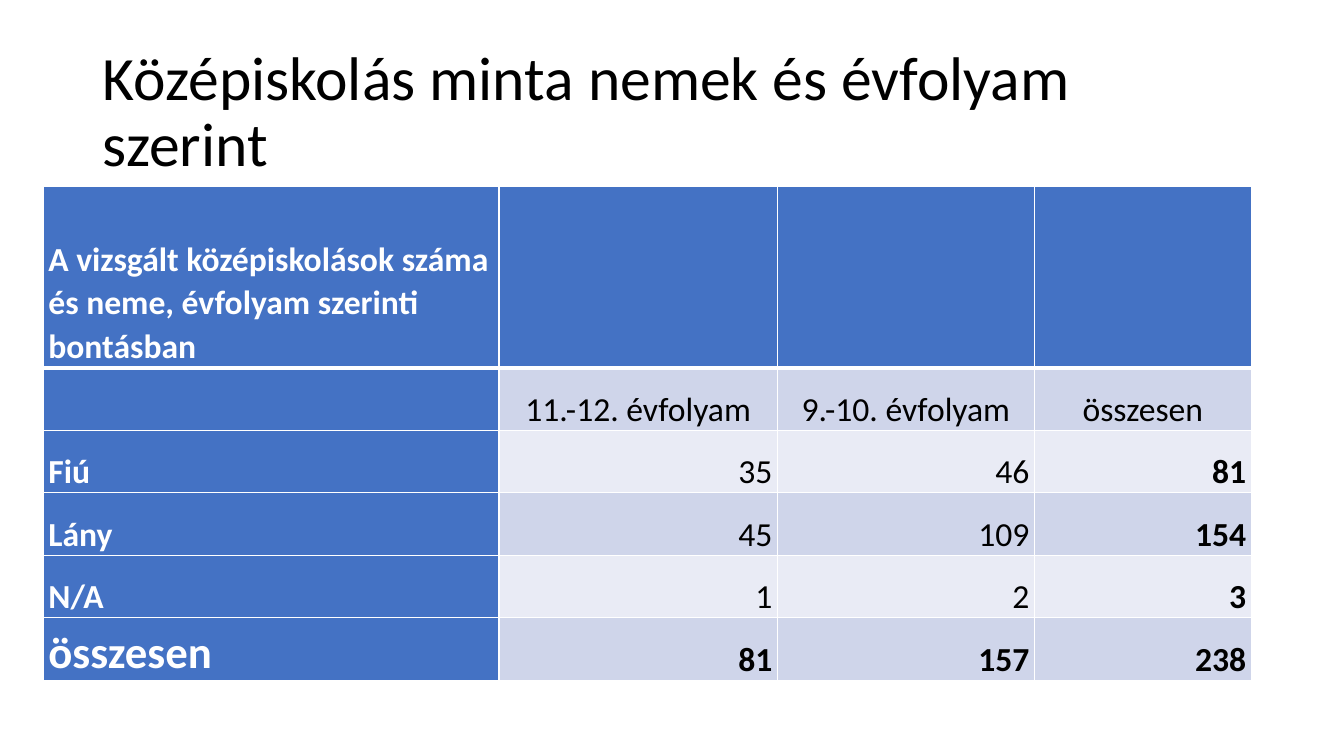
from lxml.etree import SubElement
from pptx import Presentation
from pptx.dml.color import RGBColor
from pptx.enum.text import MSO_ANCHOR, MSO_AUTO_SIZE, PP_ALIGN
from pptx.oxml.ns import qn
from pptx.util import Inches, Pt

TITLE = "Középiskolás minta nemek és évfolyam szerint"
ROWS = [
    ["A vizsgált középiskolások száma és neme, évfolyam szerinti bontásban", "", "", ""],
    ["", "11.-12. évfolyam", "9.-10. évfolyam", "összesen"],
    ["Fiú", "35", "46", "81"],
    ["Lány", "45", "109", "154"],
    ["N/A", "1", "2", "3"],
    ["összesen", "81", "157", "238"],
]
COLUMN_WIDTHS = [4.52, 2.76, 2.55, 2.15]
ROW_HEIGHTS = [1.8] + [0.62] * 5

FONT = "Calibri"
BLACK = RGBColor(0x00, 0x00, 0x00)
WHITE = RGBColor(0xFF, 0xFF, 0xFF)
BLUE = RGBColor(0x44, 0x72, 0xC4)
BANDS = [RGBColor(0xE9, 0xEB, 0xF5), RGBColor(0xCF, 0xD5, 0xEA)]
CELL_FORMAT = {
    "vertical_anchor": MSO_ANCHOR.BOTTOM,
    "margin_left": Inches(0.05),
    "margin_right": Inches(0.05),
    "margin_top": 0,
    "margin_bottom": 0,
}


def set_attributes(target, values):
    """Set every named value on the target."""
    for name, value in values.items():
        setattr(target, name, value)


def format_font(font, size, color, bold=False):
    """Apply the slide font with the given size, colour and weight."""
    set_attributes(font, {"name": FONT, "size": Pt(size), "bold": bold})
    font.color.rgb = color


def add_borders(cell, widths):
    """Draw white borders whose widths in points are keyed by side."""
    properties = cell._tc.get_or_add_tcPr()
    for side, width in widths.items():
        line = SubElement(properties, qn(f"a:ln{side}"), w=str(Pt(width)))
        fill = SubElement(line, qn("a:solidFill"))
        SubElement(fill, qn("a:srgbClr"), val=str(WHITE))


def add_title(slide):
    """Place and format the title."""
    title = slide.shapes.title
    set_attributes(title, {"left": Inches(0.92), "top": Inches(0.4),
                           "width": Inches(11.5), "height": Inches(1.45)})
    frame = title.text_frame
    frame.text = TITLE
    set_attributes(frame, {"word_wrap": True, "auto_size": MSO_AUTO_SIZE.NONE,
                           "vertical_anchor": MSO_ANCHOR.MIDDLE})
    paragraph = frame.paragraphs[0]
    set_attributes(paragraph, {"alignment": PP_ALIGN.LEFT, "line_spacing": 0.9})
    format_font(paragraph.runs[0].font, 44, BLACK)


def format_cell(cell, text, row, column):
    """Fill one cell according to its place in the table."""
    last_row, last_column = len(ROWS) - 1, len(COLUMN_WIDTHS) - 1
    is_header = row == 0 or column == 0
    set_attributes(cell, CELL_FORMAT)
    add_borders(cell, {"L": 1, "R": 1, "T": 3 if row == 1 else 1, "B": 3 if row == 0 else 1})
    cell.fill.solid()
    cell.fill.fore_color.rgb = BLUE if is_header else BANDS[row % 2]
    if not text:
        return
    cell.text = text
    if is_header:
        alignment = PP_ALIGN.LEFT
    else:
        alignment = PP_ALIGN.CENTER if row == 1 else PP_ALIGN.RIGHT
    is_total = row == last_row or (column == last_column and row > 1)
    size = 32 if row == last_row and column == 0 else 24
    paragraph = cell.text_frame.paragraphs[0]
    set_attributes(paragraph, {"alignment": alignment, "line_spacing": 1.07})
    format_font(paragraph.runs[0].font, size, WHITE if is_header else BLACK,
                is_header or is_total)


def add_student_table(slide):
    """Add the table of students by sex and grade."""
    table = slide.shapes.add_table(
        len(ROWS), len(COLUMN_WIDTHS), Inches(0.43), Inches(1.85),
        Inches(sum(COLUMN_WIDTHS)), Inches(sum(ROW_HEIGHTS))).table
    for column, width in zip(table.columns, COLUMN_WIDTHS):
        column.width = Inches(width)
    for row, height in zip(table.rows, ROW_HEIGHTS):
        row.height = Inches(height)
    for row, texts in enumerate(ROWS):
        for column, text in enumerate(texts):
            format_cell(table.cell(row, column), text, row, column)


def main():
    """Build and save the slide."""
    presentation = Presentation()
    set_attributes(presentation, {"slide_width": Inches(13.33), "slide_height": Inches(7.5)})
    slide = presentation.slides.add_slide(presentation.slide_layouts[5])
    add_title(slide)
    add_student_table(slide)
    presentation.save("out.pptx")


if __name__ == "__main__":
    main()
